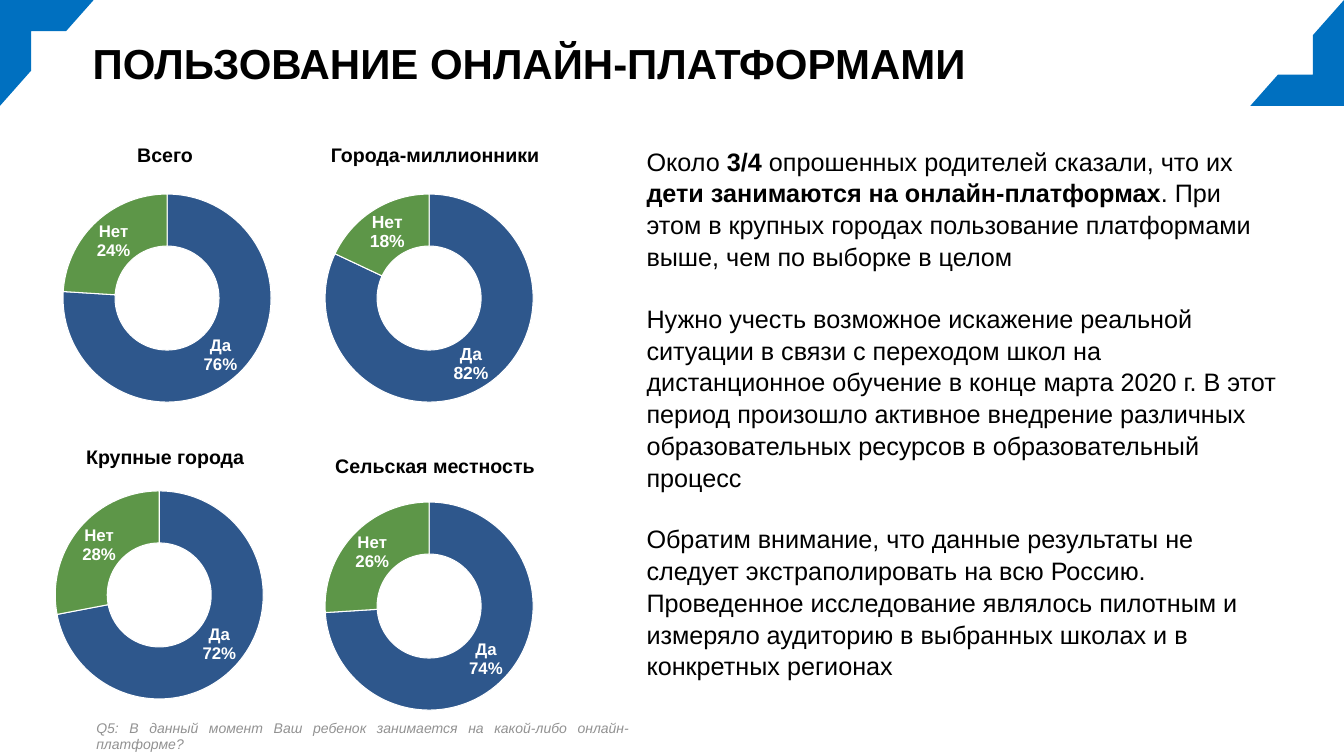
from typing import NamedTuple

from lxml.etree import SubElement
from pptx import Presentation
from pptx.chart.data import CategoryChartData
from pptx.dml.color import RGBColor
from pptx.enum.chart import XL_CHART_TYPE
from pptx.enum.shapes import MSO_SHAPE
from pptx.enum.text import MSO_ANCHOR, PP_ALIGN
from pptx.oxml.ns import qn
from pptx.util import Inches, Pt

BLUE = RGBColor(0x00, 0x70, 0xC0)
NAVY = RGBColor(0x2E, 0x57, 0x8C)
GREEN = RGBColor(0x5D, 0x96, 0x48)
GREY = RGBColor(0x92, 0x92, 0x92)
BLACK = RGBColor(0, 0, 0)
WHITE = RGBColor(0xFF, 0xFF, 0xFF)

W, H = Inches(26.67), Inches(15)
INSET = Inches(0.06)
FONT = "Arial"
# Shares of the slide, in percent
LEFT_COL, RIGHT_COL = 11.85, 31.93
RING_W, RING_H = 15.64, 27.8
CAPTION_H = 5


class Box(NamedTuple):
    """Place and size in percent of the slide."""
    x: float
    y: float
    w: float
    h: float

    def emu(self) -> tuple[int, ...]:
        return tuple(round(v * side / 100) for v, side in zip(self, (W, H, W, H)))


class Panel(NamedTuple):
    caption: str
    yes: int
    center: float
    caption_w: float
    caption_y: float
    ring_y: float
    ring_shift: float = 0
    label_size: int = 24


PANELS = [
    Panel("Всего", 76, LEFT_COL, 5.55, 17.2, 25.53, ring_shift=0.58),
    Panel("Города-миллионники", 82, RIGHT_COL, 17.06, 17.2, 25.53, label_size=25),
    Panel("Крупные города", 72, LEFT_COL, 13.57, 57.13, 64.8),
    Panel("Сельская местность", 74, RIGHT_COL, 16.84, 58.33, 66.27),
]

# Each paragraph is a list of (text, bold) runs
BODY = [
    [("Около ", False), ("3/4 ", True),
     ("опрошенных родителей сказали, что их ", False),
     ("дети занимаются на онлайн-платформах", True),
     (". При этом в крупных городах пользование платформами выше, "
      "чем по выборке в целом", False)],
    [("Нужно учесть возможное искажение реальной ситуации в связи с переходом "
      "школ на дистанционное обучение в конце марта 2020 г. В этот период "
      "произошло активное внедрение различных образовательных ресурсов "
      "в образовательный процесс", False)],
    [("Обратим внимание, что данные результаты не следует экстраполировать "
      "на всю Россию. Проведенное исследование являлось пилотным и измеряло "
      "аудиторию в выбранных школах и в конкретных регионах", False)],
]


def set_font(font, size: float, color: RGBColor = BLACK, bold=None, italic=None) -> None:
    font.name, font.size, font.bold, font.italic = FONT, Pt(size), bold, italic
    font.color.rgb = color


def set_frame(tf, wrap: bool = True) -> None:
    tf.word_wrap = wrap
    tf.vertical_anchor = MSO_ANCHOR.MIDDLE
    tf.margin_left = tf.margin_right = tf.margin_top = tf.margin_bottom = INSET


def add_text(s, box: Box, wrap: bool = True):
    tf = s.shapes.add_textbox(*box.emu()).text_frame
    set_frame(tf, wrap)
    return tf


def add_corner(s, x: float, rotation: int) -> None:
    sp = s.shapes.add_shape(MSO_SHAPE.HALF_FRAME, *Box(x, 0, 6.97, 14).emu())
    sp.shadow.inherit = False
    sp.rotation = rotation
    sp.fill.solid()
    sp.fill.fore_color.rgb = BLUE
    sp.line.fill.background()


def fill_plot(chart) -> None:
    """Let the ring take nearly the whole chart area."""
    area = chart._chartSpace.chart.plotArea
    for old in area.findall(qn("c:layout")):
        area.remove(old)
    layout = area.makeelement(qn("c:layout"))
    area.insert(0, layout)
    manual = SubElement(layout, qn("c:manualLayout"))
    for tag, val in (("layoutTarget", "inner"), ("xMode", "edge"), ("yMode", "edge"),
                     ("x", "0.005"), ("y", "0.005"), ("w", "0.99"), ("h", "0.99")):
        SubElement(manual, qn(f"c:{tag}")).set("val", val)


def add_ring(s, panel: Panel) -> None:
    data = CategoryChartData()
    data.categories = ["Да", "Нет"]
    data.add_series("Пользование", [panel.yes, 100 - panel.yes])
    box = Box(panel.center + panel.ring_shift - RING_W / 2, panel.ring_y, RING_W, RING_H)
    chart = s.shapes.add_chart(XL_CHART_TYPE.DOUGHNUT, *box.emu(), data).chart
    chart.has_title = chart.has_legend = False
    set_font(chart.font, 10)
    fill_plot(chart)

    plot = chart.plots[0]
    for i, color in enumerate((NAVY, GREEN)):
        fmt = plot.series[0].points[i].format
        fmt.fill.solid()
        fmt.fill.fore_color.rgb = color
        fmt.line.color.rgb = WHITE
        fmt.line.width = Pt(1.5)

    plot.has_data_labels = True
    labels = plot.data_labels
    labels.show_category_name = labels.show_percentage = True
    labels.show_value = False
    labels.number_format, labels.number_format_is_linked = "0%", False
    set_font(labels.font, panel.label_size, WHITE, bold=True)


def add_caption(s, panel: Panel) -> None:
    box = Box(panel.center - panel.caption_w / 2, panel.caption_y, panel.caption_w, CAPTION_H)
    p = add_text(s, box, wrap=False).paragraphs[0]
    p.text = panel.caption
    p.alignment = PP_ALIGN.CENTER
    p.line_spacing = Pt(50)
    p._p.get_or_add_pPr().set("indent", str(Inches(0.23)))
    set_font(p.font, 28, bold=True)


def main() -> None:
    prs = Presentation()
    prs.slide_width, prs.slide_height = W, H
    s = prs.slides.add_slide(prs.slide_layouts[5])

    # Title
    title = s.shapes.title
    title.left, title.top, title.width, title.height = Box(6.67, 0, 86.13, 16.67).emu()
    set_frame(title.text_frame)
    p = title.text_frame.paragraphs[0]
    p.text = "ПОЛЬЗОВАНИЕ ОНЛАЙН-ПЛАТФОРМАМИ"
    p.alignment = PP_ALIGN.LEFT
    set_font(p.font, 60, bold=True)

    # Corner frames
    add_corner(s, 0, 0)
    add_corner(s, 93.03, 180)

    # Rings with captions
    for panel in PANELS:
        add_ring(s, panel)
        add_caption(s, panel)

    # Commentary
    tf = add_text(s, Box(47.88, 27.33, 47.51, 54.53))
    for i, runs in enumerate(BODY):
        p = tf.add_paragraph() if i else tf.paragraphs[0]
        p.line_spacing = 1.05
        p.space_before = Pt(43 if i else 0)
        set_font(p.font, 36)
        for text, bold in runs:
            r = p.add_run()
            r.text, r.font.bold = text, bold

    # Survey question
    p = add_text(s, Box(6.94, 95.87, 40.12, 2.93)).paragraphs[0]
    p.text = "Q5: В данный момент Ваш ребенок занимается на какой-либо онлайн-платформе?"
    p.alignment = PP_ALIGN.JUSTIFY
    set_font(p.font, 20, GREY, italic=True)

    prs.save("out.pptx")


if __name__ == "__main__":
    main()
